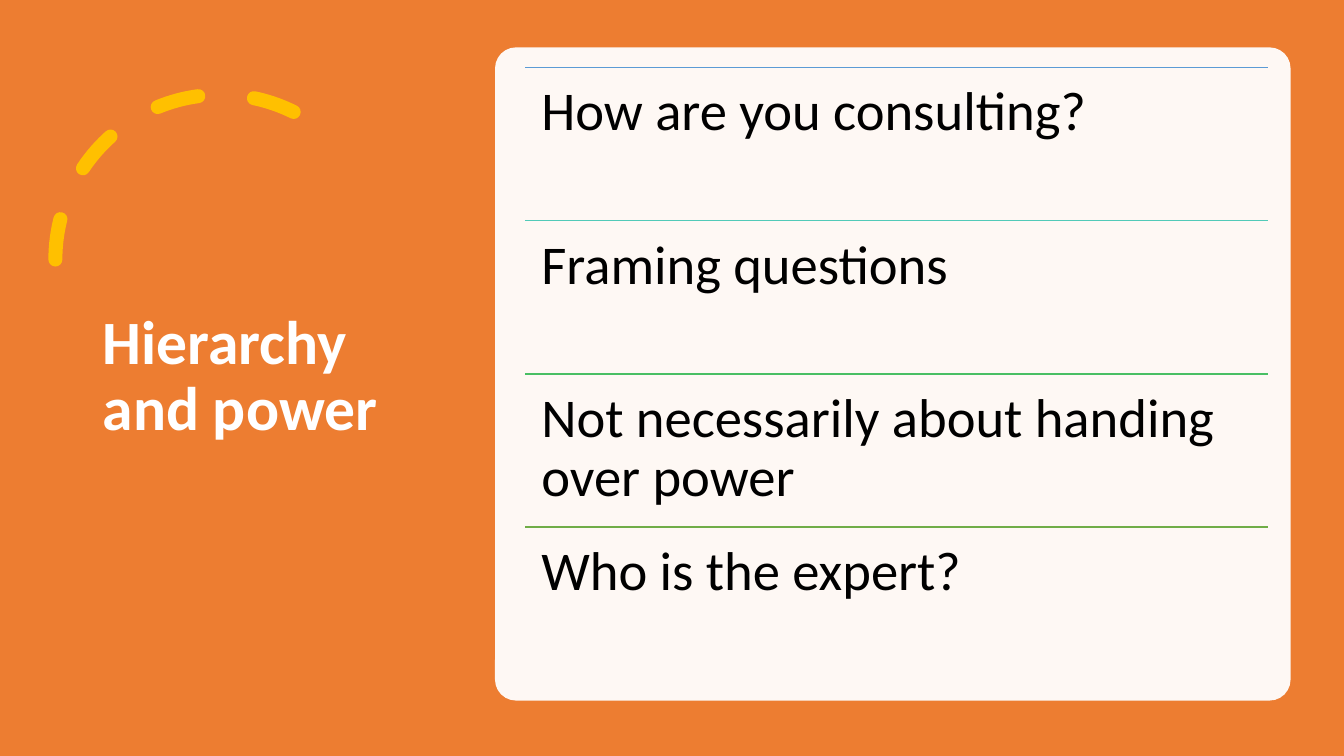
from dataclasses import dataclass
from lxml.etree import SubElement
from pptx import Presentation
from pptx.dml.color import RGBColor
from pptx.enum.dml import MSO_LINE
from pptx.enum.shapes import MSO_CONNECTOR, MSO_SHAPE
from pptx.enum.text import MSO_ANCHOR
from pptx.oxml.ns import qn
from pptx.util import Inches, Pt

WIDE, HIGH = 13.33, 7.5


@dataclass(frozen=True)
class Theme:
    font: str = "Calibri"
    back: str = "ED7D31"
    accent: str = "FFC000"
    light: str = "FFFFFF"
    dark: str = "000000"
    rules: tuple = ("5B9BD5", "52CAB8", "49BF64", "70AD47")
    title: int = 44
    body: int = 39


THEME = Theme()
TITLE = "Hierarchy and power"
POINTS = (
    "How are you consulting?",
    "Framing questions",
    "Not necessarily about handing over power",
    "Who is the expert?",
)


def style(item, **values):
    for name, value in values.items():
        setattr(item, name, value)


def color(text):
    return RGBColor.from_string(text)


def add_shape(slide, kind, box, fill=None):
    shape = slide.shapes.add_shape(kind, *map(Inches, box))
    shape.shadow.inherit = False
    if fill:
        shape.fill.solid()
        shape.fill.fore_color.rgb = color(fill)
        shape.line.fill.background()
    else:
        shape.fill.background()
    return shape


def add_text(slide, box, text, size, tint, bold=False, after=0, **frame):
    area = slide.shapes.add_textbox(*map(Inches, box)).text_frame
    style(area, word_wrap=True, **frame)
    para = area.paragraphs[0]
    style(para, line_spacing=0.9, space_after=Pt(after))
    run = para.add_run()
    run.text = text
    style(run.font, name=THEME.font, size=Pt(size), bold=bold)
    run.font.color.rgb = color(tint)


def add_rule(slide, left, top, width, tint):
    ends = map(Inches, (left, top, left + width, top))
    rule = slide.shapes.add_connector(MSO_CONNECTOR.STRAIGHT, *ends)
    rule.line.width = Pt(1)
    rule.line.color.rgb = color(tint)
    SubElement(rule._element.spPr, qn("a:effectLst"))


def add_arc(slide, box):
    arc = add_shape(slide, MSO_SHAPE.ARC, box)
    arc.adjustments[0], arc.adjustments[1] = 146.13, 0
    style(arc.line, width=Pt(10), dash_style=MSO_LINE.DASH)
    arc.line.color.rgb = color(THEME.accent)
    # Mirrored, with round dash ends
    arc._element.spPr.find(qn("a:xfrm")).set("flipH", "1")
    arc._element.spPr.find(qn("a:ln")).set("cap", "rnd")


def side_panel(slide, box):
    left, top, width, height = box
    add_arc(slide, (left + 0.55, top + 0.94, 3.27, 3.27))
    place = (left + 0.92, top + 0.7, width - 1.68, height - 1.41)
    add_text(slide, place, TITLE, THEME.title, THEME.light, bold=True,
             vertical_anchor=MSO_ANCHOR.MIDDLE)


def point_card(slide, box):
    left, top, width, height = box
    card = add_shape(slide, MSO_SHAPE.ROUNDED_RECTANGLE, box, THEME.light)
    card.adjustments[0] = 0.032
    tint = card._element.spPr.find(qn("a:solidFill"))[0]
    SubElement(tint, qn("a:alpha"), val="95000")

    # Equal rows, each under its own rule
    x, y, wide = left + 0.3, top + 0.2, width - 0.52
    row = (height - 0.4) / len(POINTS)
    inset = dict.fromkeys(
        ("margin_left", "margin_top", "margin_right", "margin_bottom"),
        Inches(0.16))
    for i, (text, tint) in enumerate(zip(POINTS, THEME.rules)):
        level = y + i * row
        add_rule(slide, x, level, wide, tint)
        add_text(slide, (x, level, wide, row), text, THEME.body, THEME.dark,
                 after=0.35 * THEME.body, **inset)


def main():
    deck = Presentation()
    style(deck, slide_width=Inches(WIDE), slide_height=Inches(HIGH))
    slide = deck.slides.add_slide(deck.slide_layouts[6])
    add_shape(slide, MSO_SHAPE.RECTANGLE, (0, 0, WIDE, HIGH), THEME.back)
    side_panel(slide, (0, 0, 4.91, HIGH))
    point_card(slide, (4.91, 0.47, 7.89, 6.48))
    deck.save("out.pptx")


if __name__ == "__main__":
    main()
